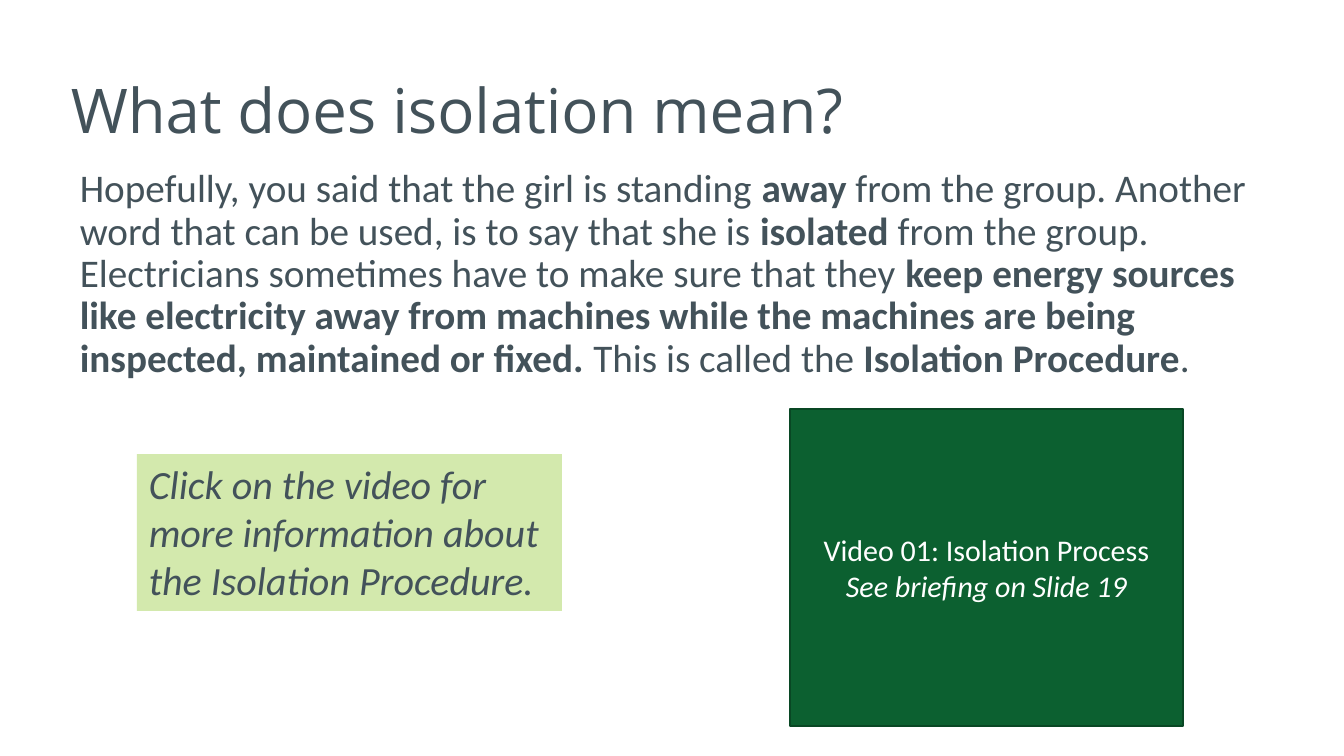
from pptx import Presentation
from pptx.dml.color import RGBColor
from pptx.enum.shapes import MSO_SHAPE
from pptx.enum.text import MSO_ANCHOR, PP_ALIGN
from pptx.util import Pt

PX = 7620
SIZE = (1344, 756)
COLORS = {"slate": "43525A", "green": "0C6030", "edge": "094724",
          "lime": "D3E9AD", "white": "FFFFFF"}

BLOCKS = [
    {"box": (59, 41, 1159, 146), "anchor": MSO_ANCHOR.MIDDLE,
     "font": ("Open Sans", 37, "slate"), "para": {"line_spacing": 0.9},
     "text": [[("What does isolation mean?", "")]]},
    {"box": (68, 163, 1208, 124), "anchor": MSO_ANCHOR.TOP,
     "font": ("Calibri", 23.5, "slate"),
     "para": {"line_spacing": 0.9, "space_before": Pt(8.4)},
     "text": [[
         ("Hopefully, you said that the girl is standing ", ""),
         ("away", "b"),
         (" from the group. Another word that can be used, is to say that she is ", ""),
         ("isolated ", "b"),
         ("from the group. Electricians sometimes have to make sure that they ", ""),
         ("keep energy sources like electricity away from machines while the "
          "machines are being inspected, maintained or fixed. ", "b"),
         ("This is called the ", ""),
         ("Isolation Procedure", "b"),
         (".", "")]]},
    {"box": (790, 409, 393, 317), "anchor": MSO_ANCHOR.MIDDLE,
     "fill": "green", "line": "edge",
     "font": ("Calibri", 18, "white"), "para": {"alignment": PP_ALIGN.CENTER},
     "text": [[("Video 01: Isolation Process", "")],
              [("See briefing on Slide 19", "i")]]},
    {"box": (137, 454, 425, 157), "anchor": MSO_ANCHOR.TOP, "fill": "lime",
     "font": ("Calibri", 24, "slate"), "para": {"alignment": PP_ALIGN.LEFT},
     "text": [[("Click on the video for more information about "
                "the Isolation Procedure.", "i")]]},
]


def rgb(name):
    return RGBColor.from_string(COLORS[name])


def add_block(s, block):
    box = [v * PX for v in block["box"]]
    if "fill" in block:
        sp = s.shapes.add_shape(MSO_SHAPE.RECTANGLE, *box)
        sp.shadow.inherit = False
        sp.fill.solid()
        sp.fill.fore_color.rgb = rgb(block["fill"])
        if "line" in block:
            sp.line.color.rgb = rgb(block["line"])
            sp.line.width = Pt(1)
        else:
            sp.line.fill.background()
    else:
        sp = s.shapes.add_textbox(*box)
    tf = sp.text_frame
    tf.word_wrap = True
    tf.vertical_anchor = block["anchor"]
    name, size, color = block["font"]
    for i, runs in enumerate(block["text"]):
        p = tf.add_paragraph() if i else tf.paragraphs[0]
        for key, value in block["para"].items():
            setattr(p, key, value)
        for text, style in runs:
            r = p.add_run()
            r.text = text
            r.font.color.rgb = rgb(color)
            formats = {"name": name, "size": Pt(size),
                       "bold": style == "b", "italic": style == "i"}
            for key, value in formats.items():
                setattr(r.font, key, value)


prs = Presentation()
prs.slide_width, prs.slide_height = [v * PX for v in SIZE]
s = prs.slides.add_slide(prs.slide_layouts[6])
for block in BLOCKS:
    add_block(s, block)
prs.save("out.pptx")
